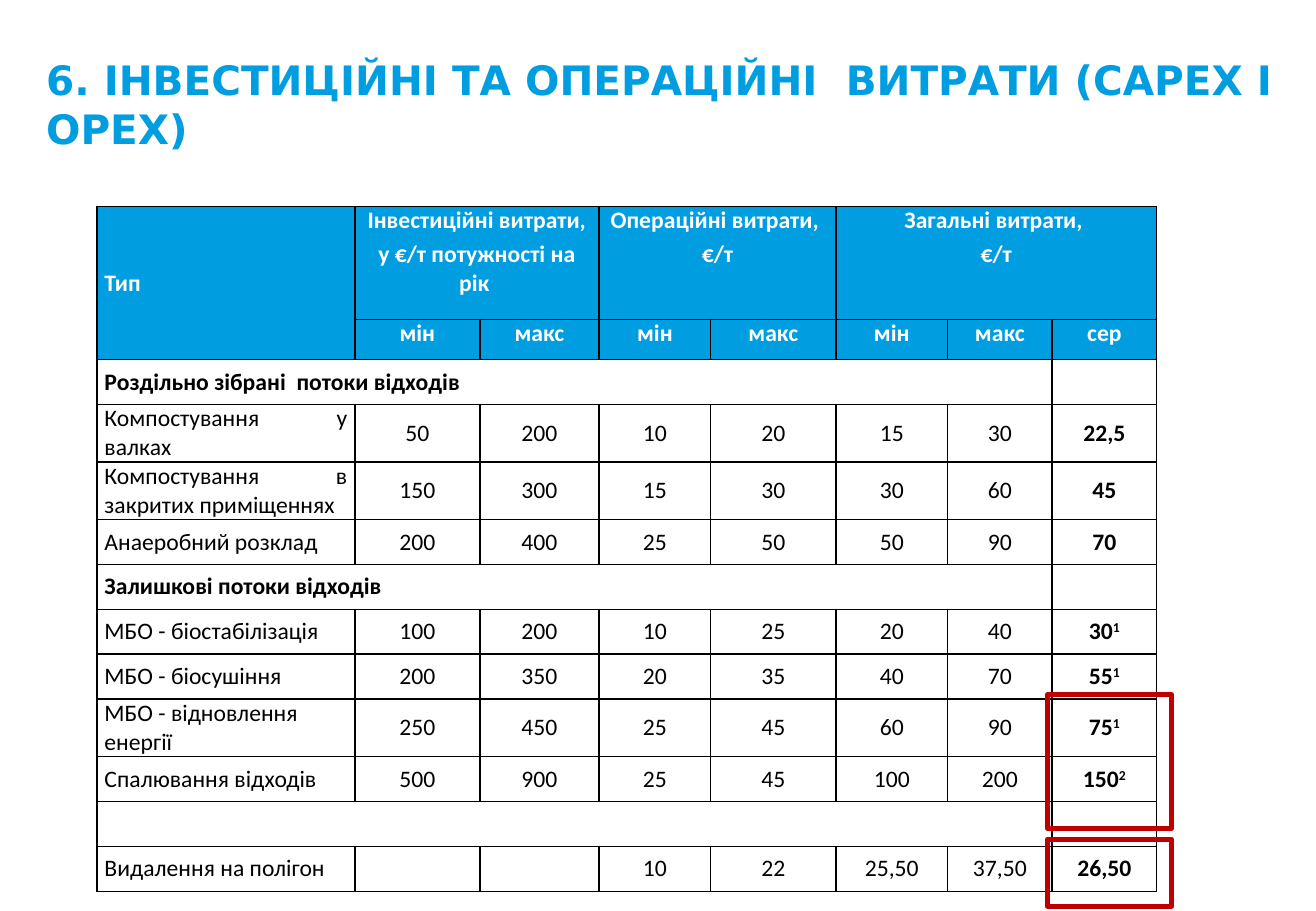
from typing import NamedTuple

from lxml import etree
from pptx import Presentation
from pptx.dml.color import RGBColor
from pptx.enum.shapes import MSO_SHAPE
from pptx.enum.text import MSO_ANCHOR, MSO_AUTO_SIZE, PP_ALIGN
from pptx.oxml.ns import qn
from pptx.util import Inches, Pt

LEFT, CENTER, JUSTIFY = PP_ALIGN.LEFT, PP_ALIGN.CENTER, PP_ALIGN.JUSTIFY
TOP, MIDDLE = MSO_ANCHOR.TOP, MSO_ANCHOR.MIDDLE
RECTANGLE = MSO_SHAPE.RECTANGLE
TITLE_ONLY = 5

BLUE, WHITE, BLACK, RED = "009DE0", "FFFFFF", "000000", "C00000"
COLUMN_WIDTHS = [2.12, 1.03, 0.98, 0.92, 1.03, 0.92, 0.86, 0.86]
LAST_COLUMN = len(COLUMN_WIDTHS) - 1


class HeaderGroup(NamedTuple):
    column: int
    span: int
    lines: list[str]


class CostRow(NamedTuple):
    name: str
    costs: list[str]
    height: float = 0.37
    align: PP_ALIGN = JUSTIFY


class Section(NamedTuple):
    heading: str
    height: float = 0.37


class Highlight(NamedTuple):
    top: float
    height: float


HEADER_GROUPS = [
    HeaderGroup(1, 2, ["Інвестиційні витрати,", "у €/т потужності на рік "]),
    HeaderGroup(3, 2, ["Операційні витрати, ", "€/т"]),
    HeaderGroup(5, 3, ["Загальні витрати, ", "€/т"]),
]
SUBHEADINGS = ["мін", "макс", "мін", "макс", "мін", "макс", "сер"]
HEADER_HEIGHTS = [0.93, 0.33]

# A caret marks the footnote number set as superscript.
BODY_ROWS = [
    Section("Роздільно зібрані  потоки відходів"),
    CostRow("Компостування у валках", ["50", "200", "10", "20", "15", "30", "22,5"], 0.45),
    CostRow("Компостування в закритих приміщеннях",
            ["150", "300", "15", "30", "30", "60", "45"], 0.45),
    CostRow("Анаеробний розклад", ["200", "400", "25", "50", "50", "90", "70"]),
    Section("Залишкові потоки відходів"),
    CostRow("МБО - біостабілізація", ["100", "200", "10", "25", "20", "40", "30^1"], align=LEFT),
    CostRow("МБО - біосушіння", ["200", "350", "20", "35", "40", "70", "55^1"], align=LEFT),
    CostRow("MБО - відновлення енергії",
            ["250", "450", "25", "45", "60", "90", "75^1"], 0.45, LEFT),
    CostRow("Спалювання відходів", ["500", "900", "25", "45", "100", "200", "150^2"]),
    Section(""),
    CostRow("Видалення на полігон", ["", "", "10", "22", "25,50", "37,50", "26,50"]),
]
HIGHLIGHTS = [Highlight(5.72, 1.1), Highlight(6.91, 0.55)]


def rgb(hex_color: str) -> RGBColor:
    return RGBColor.from_string(hex_color)


def format_font(font, name: str, size: float, color: str, bold: bool) -> None:
    for attribute, value in {"name": name, "size": Pt(size), "bold": bold}.items():
        setattr(font, attribute, value)
    font.color.rgb = rgb(color)


def add_borders(cell) -> None:
    properties = cell._tc.get_or_add_tcPr()
    for position, side in enumerate(("lnL", "lnR", "lnT", "lnB")):
        border = etree.Element(qn(f"a:{side}"), w=str(Pt(1)))
        fill = etree.SubElement(border, qn("a:solidFill"))
        etree.SubElement(fill, qn("a:srgbClr"), val=BLACK)
        properties.insert(position, border)


def prepare_cell(cell, fill: str) -> None:
    margins = {"margin_left": 0.06, "margin_right": 0.06, "margin_top": 0, "margin_bottom": 0}
    for attribute, value in margins.items():
        setattr(cell, attribute, Inches(value))
    cell.fill.solid()
    cell.fill.fore_color.rgb = rgb(fill)
    add_borders(cell)
    cell.text_frame.paragraphs[0].font.size = Pt(14)


def write_cell(cell, lines: list[str], align: PP_ALIGN, color: str = BLACK, bold: bool = False,
               anchor: MSO_ANCHOR = MIDDLE, space_after: float = 3) -> None:
    cell.vertical_anchor = anchor
    frame = cell.text_frame
    for index, line in enumerate(lines):
        paragraph = frame.add_paragraph() if index else frame.paragraphs[0]
        paragraph.alignment = align
        paragraph.space_after = Pt(space_after)
        value, _, footnote = line.partition("^")
        for text, baseline in ((value, "0"), (footnote, "30000")):
            if text:
                run = paragraph.add_run()
                run.text = text
                format_font(run.font, "Calibri", 14, color, bold)
                run._r.get_or_add_rPr().set("baseline", baseline)


def add_title(slide) -> None:
    title = slide.shapes.title
    box = {"left": 0.38, "top": 0.45, "width": 10.28, "height": 0.81}
    for attribute, value in box.items():
        setattr(title, attribute, Inches(value))
    frame = title.text_frame
    frame.text = "6. ІНВЕСТИЦІЙНІ ТА ОПЕРАЦІЙНІ  ВИТРАТИ (CAPEX І OPEХ)"
    settings = {"margin_left": 0, "margin_right": 0, "margin_top": 0, "margin_bottom": 0,
                "vertical_anchor": MIDDLE, "word_wrap": True, "auto_size": MSO_AUTO_SIZE.NONE}
    for attribute, value in settings.items():
        setattr(frame, attribute, value)
    paragraph = frame.paragraphs[0]
    paragraph.alignment = LEFT
    format_font(paragraph.runs[0].font, "DejaVu Sans", 24, BLUE, True)


def write_header(table) -> None:
    table.cell(0, 0).merge(table.cell(1, 0))
    write_cell(table.cell(0, 0), ["Тип"], JUSTIFY, WHITE, True)
    for group in HEADER_GROUPS:
        cell = table.cell(0, group.column)
        cell.merge(table.cell(0, group.column + group.span - 1))
        write_cell(cell, group.lines, CENTER, WHITE, True, TOP)
    for column, subheading in enumerate(SUBHEADINGS, start=1):
        write_cell(table.cell(1, column), [subheading], CENTER, WHITE, True, TOP, 0)


def write_body(table) -> None:
    for row, entry in enumerate(BODY_ROWS, start=len(HEADER_HEIGHTS)):
        first = table.cell(row, 0)
        if isinstance(entry, Section):
            first.merge(table.cell(row, LAST_COLUMN - 1))
            write_cell(first, [entry.heading], LEFT, bold=True, space_after=0)
            continue
        write_cell(first, [entry.name], entry.align)
        for column, cost in enumerate(entry.costs, start=1):
            write_cell(table.cell(row, column), [cost], CENTER, bold=column == LAST_COLUMN)


def add_cost_table(slide) -> None:
    heights = HEADER_HEIGHTS + [entry.height for entry in BODY_ROWS]
    table = slide.shapes.add_table(
        len(heights), len(COLUMN_WIDTHS), Inches(0.8), Inches(1.7),
        Inches(sum(COLUMN_WIDTHS)), Inches(sum(heights))).table
    table.first_row = table.horz_banding = False
    for column, width in zip(table.columns, COLUMN_WIDTHS):
        column.width = Inches(width)
    for index, (row, height) in enumerate(zip(table.rows, heights)):
        row.height = Inches(height)
        for cell in row.cells:
            prepare_cell(cell, BLUE if index < len(HEADER_HEIGHTS) else WHITE)
    write_header(table)
    write_body(table)


def add_highlight(slide, highlight: Highlight) -> None:
    frame = slide.shapes.add_shape(RECTANGLE, Inches(8.62), Inches(highlight.top),
                                   Inches(1.02), Inches(highlight.height))
    frame.shadow.inherit = False
    frame.fill.background()
    frame.line.color.rgb = rgb(RED)
    frame.line.width = Pt(3)


def main() -> None:
    presentation = Presentation()
    presentation.slide_width = Inches(10.83)
    presentation.slide_height = Inches(7.5)
    slide = presentation.slides.add_slide(presentation.slide_layouts[TITLE_ONLY])
    add_title(slide)
    add_cost_table(slide)
    for highlight in HIGHLIGHTS:
        add_highlight(slide, highlight)
    presentation.save("out.pptx")


if __name__ == "__main__":
    main()
